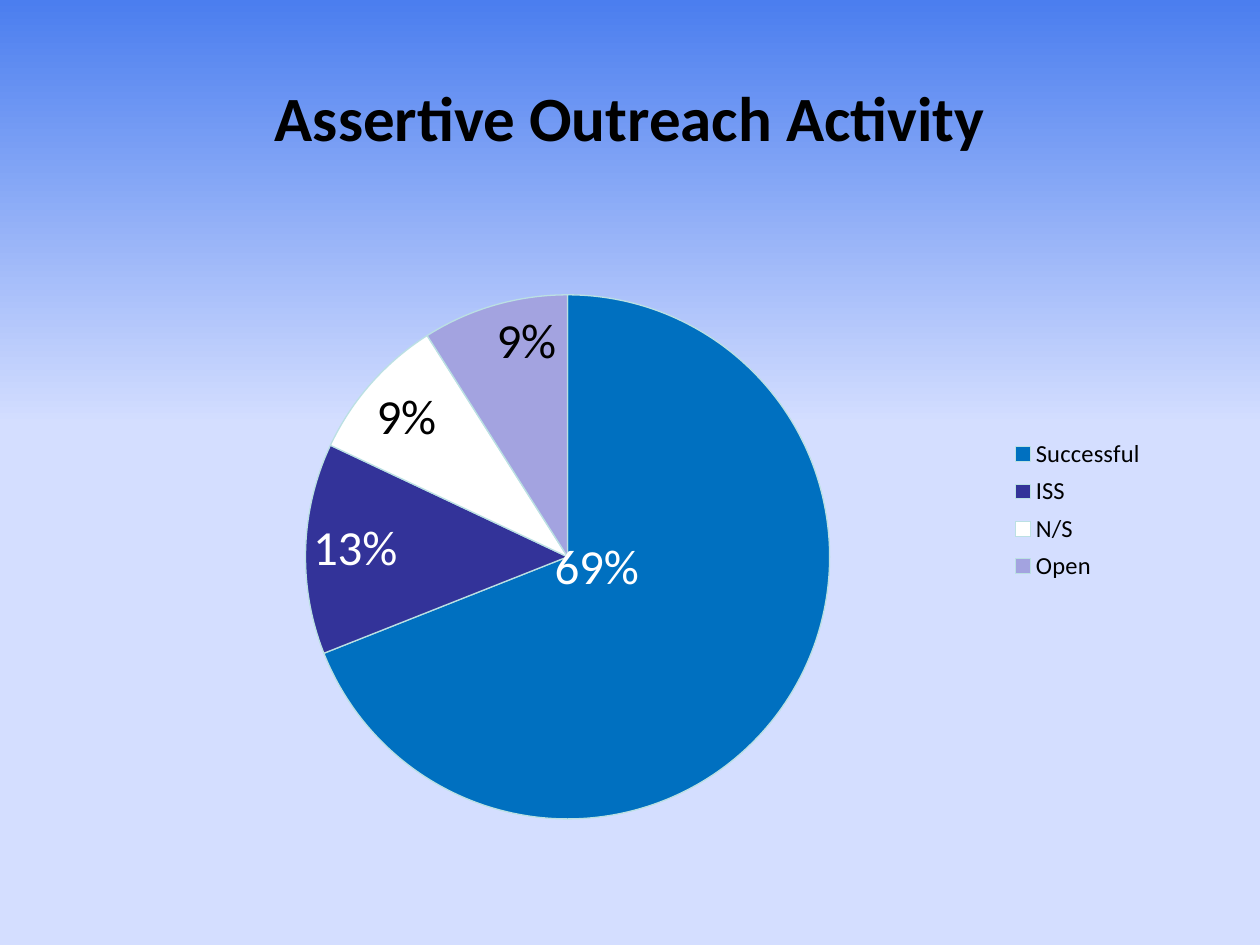
from copy import deepcopy

from lxml import etree
from pptx import Presentation
from pptx.chart.data import CategoryChartData
from pptx.dml.color import RGBColor
from pptx.enum.chart import XL_CHART_TYPE as ChartType
from pptx.enum.chart import XL_LABEL_POSITION as LabelPosition
from pptx.enum.chart import XL_LEGEND_POSITION as LegendPosition
from pptx.enum.text import MSO_ANCHOR as Anchor
from pptx.enum.text import PP_ALIGN as Align
from pptx.oxml.ns import qn
from pptx.util import Emu, Pt

PX_PER_INCH = 126
FONT = "Calibri"
BLACK = RGBColor(0x00, 0x00, 0x00)
WHITE = RGBColor(0xFF, 0xFF, 0xFF)
SKY = RGBColor(0x4B, 0x7E, 0xEF)
MIST = RGBColor(0xD4, 0xDE, 0xFF)
BLUE = RGBColor(0x00, 0x70, 0xC0)
INDIGO = RGBColor(0x33, 0x33, 0x99)
LILAC = RGBColor(0xA3, 0xA3, 0xE0)
EDGE = RGBColor(0xBB, 0xE0, 0xE3)

TITLE_BOX = (63, 38, 1134, 157)
CHART_BOX = (63, 220, 1134, 624)
# category, percent, slice colour, label colour, label position
SLICES = [
    ("Successful", 69, BLUE, WHITE, LabelPosition.CENTER),
    ("ISS", 13, INDIGO, WHITE, LabelPosition.INSIDE_END),
    ("N/S", 9, WHITE, BLACK, LabelPosition.INSIDE_END),
    ("Open", 9, LILAC, BLACK, LabelPosition.INSIDE_END),
]


def px(length):
    return Emu(round(length * 914400 / PX_PER_INCH))


def style_font(font, size, color, bold=False):
    font.name, font.size, font.bold = FONT, Pt(size), bold
    font.color.rgb = color


def add_text(page, box, text, size, color=BLACK, bold=False, align=Align.CENTER):
    frame = page.shapes.add_textbox(*map(px, box)).text_frame
    frame.word_wrap = True
    frame.vertical_anchor = Anchor.MIDDLE
    para = frame.paragraphs[0]
    para.alignment = align
    span = para.add_run()
    span.text = text
    style_font(span.font, size, color, bold)


def paint_background(page):
    """Fade from sky to mist over the top 45 %, then stay flat."""
    fill = page.background.fill
    fill.gradient()
    fill.gradient_angle = 270
    for stop, color, position in zip(fill.gradient_stops, (SKY, MIST), (0, 0.45)):
        stop.color.rgb = color
        stop.position = position
    stops = page.element.find(".//" + qn("a:gsLst"))
    last = deepcopy(stops[-1])
    last.set("pos", "100000")
    stops.append(last)


def place(before, **values):
    """Put a manual layout right after the given chart element."""
    old = before.getparent().find(qn("c:layout"))
    if old is not None:
        before.getparent().remove(old)
    layout = etree.Element(qn("c:layout"))
    manual = etree.SubElement(layout, qn("c:manualLayout"))
    for name, value in values.items():
        etree.SubElement(manual, qn("c:" + name)).set("val", str(value))
    before.addnext(layout)


def label_slice(point, color, position):
    label = point.data_label
    style_font(label.font, 28, color)
    label.position = position


def add_pie(page, box):
    data = CategoryChartData()
    data.categories = [piece[0] for piece in SLICES]
    data.add_series("Series 1", [piece[1] for piece in SLICES])
    chart = page.shapes.add_chart(ChartType.PIE, *map(px, box), data).chart
    chart.has_title = False
    style_font(chart.font, 10, BLACK)

    plot = chart.plots[0]
    plot.vary_by_categories = True
    series = plot.series[0]
    labels = series.data_labels
    labels.show_percentage, labels.show_value = True, False
    labels.number_format, labels.number_format_is_linked = "0%", False
    style_font(labels.font, 28, WHITE)
    for index, (_, _, fill, ink, position) in enumerate(SLICES):
        point = series.points[index]
        point.format.fill.solid()
        point.format.fill.fore_color.rgb = fill
        point.format.line.color.rgb = EDGE
        point.format.line.width = Pt(0.75)
        label_slice(point, ink, position)

    root = chart.element
    for label in root.iter(qn("c:dLbl")):
        label.find(qn("c:showVal")).set("val", "0")
        label.find(qn("c:showPercent")).set("val", "1")
    main_label = root.find(".//" + qn("c:dLbl"))
    place(main_label.find(qn("c:idx")), x=-0.07, y=-0.1)

    chart.has_legend = True
    legend = chart.legend
    legend.position = LegendPosition.RIGHT
    legend.include_in_layout = False
    style_font(legend.font, 14, BLACK)
    place(root.find(".//" + qn("c:legendPos")),
          xMode="edge", yMode="edge", x=0.83, y=0.34, w=0.13, h=0.25)

    area = root.find(".//" + qn("c:plotArea"))
    if area.find(qn("c:layout")) is None:
        area.insert(0, etree.Element(qn("c:layout")))
    anchor = etree.Element("anchor")
    area.insert(0, anchor)
    place(anchor, layoutTarget="inner", xMode="edge", yMode="edge",
          x=0.21, y=0.12, w=0.47, h=0.84)
    area.remove(anchor)


def main():
    deck = Presentation()
    deck.slide_width, deck.slide_height = px(1260), px(945)
    page = deck.slides.add_slide(deck.slide_layouts[6])
    paint_background(page)
    add_text(page, TITLE_BOX, "Assertive Outreach Activity", 36, bold=True)
    add_pie(page, CHART_BOX)
    deck.save("out.pptx")


if __name__ == "__main__":
    main()
